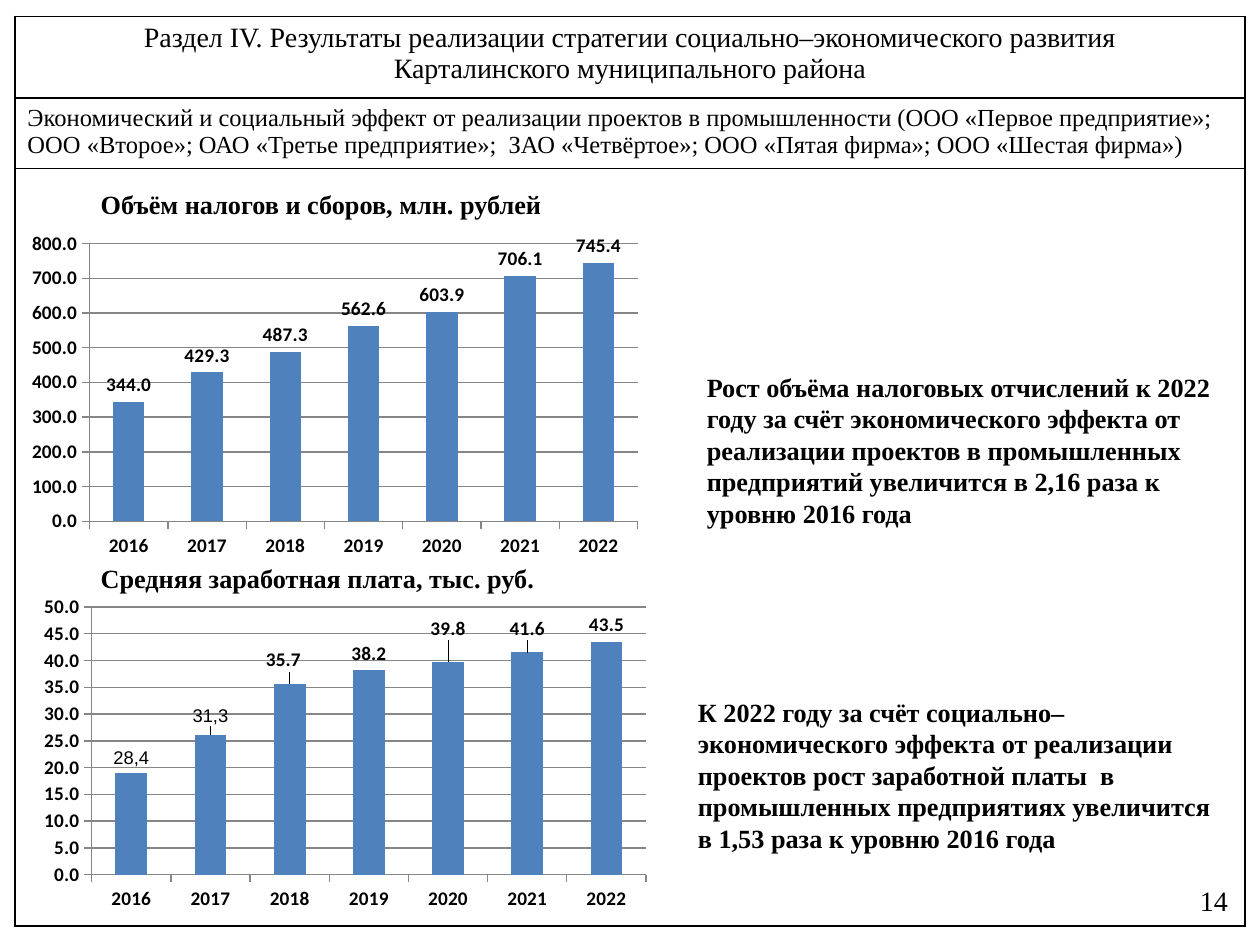
import pptx
import pptx.chart.data
import pptx.dml.color
import pptx.enum.chart
import pptx.enum.text
import pptx.oxml
import pptx.oxml.ns
import pptx.util
from pptx.util import Cm, Pt

COLORS = {"text": "000000", "bar": "4F81BD", "grid": "868686", "border": "000000"}
SERIF = "Times New Roman"
YEARS = [str(year) for year in range(2016, 2023)]
ALIGN = pptx.enum.text.PP_ALIGN
NAMESPACES = pptx.oxml.ns.nsdecls

HEADER_ROWS = [
    (["Раздел IV. Результаты реализации стратегии социально–экономического развития",
      "Карталинского муниципального района"], 16, ALIGN.CENTER),
    (["Экономический и социальный эффект от реализации проектов в промышленности (ООО «Первое предприятие»;",
      "ООО «Второе»; ОАО «Третье предприятие»;  ЗАО «Четвёртое»; ООО «Пятая фирма»; ООО «Шестая фирма»)"],
     14, ALIGN.JUSTIFY),
]
TAX_NOTE = ("Рост объёма налоговых отчислений к 2022 году за счёт экономического эффекта "
            "от реализации проектов в промышленных предприятий увеличится в 2,16 раза "
            "к уровню 2016 года")
WAGE_NOTE = ("К 2022 году за счёт социально–экономического эффекта от реализации проектов "
             "рост заработной платы  в промышленных предприятиях увеличится в 1,53 раза "
             "к уровню 2016 года")


def rgb(name):
    return pptx.dml.color.RGBColor.from_string(COLORS[name])


def style_font(font, size, bold=False, name=SERIF):
    font.size, font.bold, font.name = Pt(size), bold, name
    font.color.rgb = rgb("text")


def border_cell(cell):
    properties = cell._tc.get_or_add_tcPr()
    for position, side in enumerate(("lnL", "lnR", "lnT", "lnB")):
        properties.insert(position, pptx.oxml.parse_xml(
            f'<a:{side} {NAMESPACES("a")} w="12700"><a:solidFill>'
            f'<a:srgbClr val="{COLORS["border"]}"/></a:solidFill></a:{side}>'))


def add_frame_table(slide):
    """Add the one-column table that holds the headings and frames the slide."""
    heights = (1.65, 1.42, 15.27)
    frame = slide.shapes.add_table(len(heights), 1, Cm(0.3), Cm(0.33),
                                   Cm(24.8), Cm(sum(heights)))
    table = frame.table
    table.first_row = table.horz_banding = False
    for row, height in zip(table.rows, heights):
        row.height = Cm(height)
        row.cells[0].fill.background()
        border_cell(row.cells[0])
    for row, (lines, size, alignment) in zip(table.rows, HEADER_ROWS):
        text = row.cells[0].text_frame
        text.text = "\n".join(lines)
        for paragraph in text.paragraphs:
            paragraph.alignment = alignment
            style_font(paragraph.font, size)


def add_text(slide, text, left, top, width, height, size=15, bold=True, alignment=ALIGN.LEFT):
    box = slide.shapes.add_textbox(Cm(left), Cm(top), Cm(width), Cm(height))
    box.text_frame.word_wrap = True
    box.text_frame.vertical_anchor = pptx.enum.text.MSO_ANCHOR.MIDDLE
    paragraph = box.text_frame.paragraphs[0]
    paragraph.text = text
    paragraph.alignment = alignment
    style_font(paragraph.font, size, bold)


def manual_layout(*settings):
    """Return a c:layout element holding the (tag, value) settings."""
    children = "".join(f'<c:{tag} val="{value}"/>' for tag, value in settings)
    return pptx.oxml.parse_xml(
        f'<c:layout {NAMESPACES("c")}><c:manualLayout>{children}</c:manualLayout></c:layout>')


def set_plot_area(chart, x, y, width, height):
    area = chart._chartSpace.chart.plotArea
    for old in area.findall(pptx.oxml.ns.qn("c:layout")):
        area.remove(old)
    area.insert(0, manual_layout(
        ("layoutTarget", "inner"), ("xMode", "edge"), ("yMode", "edge"),
        ("x", x), ("y", y), ("w", width), ("h", height)))


def adjust_label(series, index, x, y, text=None):
    """Shift one data label by chart fractions, optionally replacing its text."""
    label = series.points[index].data_label
    if text:
        paragraph = label.text_frame.paragraphs[0]
        paragraph.text = text
        style_font(paragraph.runs[0].font, 10.5, name="Arial")
    else:
        style_font(label.font, 11, True, "Calibri")
    label.position = pptx.enum.chart.XL_LABEL_POSITION.OUTSIDE_END
    if x or y:
        label._dLbl.insert(1, manual_layout(("x", x), ("y", y)))


def add_column_chart(slide, values, place, plot_area, maximum, step):
    data = pptx.chart.data.CategoryChartData(number_format="0.0")
    data.categories = YEARS
    data.add_series("Series 1", values)
    chart = slide.shapes.add_chart(pptx.enum.chart.XL_CHART_TYPE.COLUMN_CLUSTERED,
                                   *map(Cm, place), data).chart
    chart.has_legend = chart.has_title = False
    style_font(chart.font, 10, name="Calibri")
    set_plot_area(chart, *plot_area)

    for axis in (chart.category_axis, chart.value_axis):
        style_font(axis.tick_labels.font, 11, True, "Calibri")
        axis.major_tick_mark = pptx.enum.chart.XL_TICK_MARK.OUTSIDE
        axis.format.line.color.rgb = rgb("grid")
    axis = chart.value_axis
    axis.minimum_scale, axis.maximum_scale, axis.major_unit = 0, maximum, step
    axis.has_major_gridlines = True
    axis.major_gridlines.format.line.color.rgb = rgb("grid")
    axis.tick_labels.number_format = "0.0"
    axis.tick_labels.number_format_is_linked = False

    plot = chart.plots[0]
    plot.gap_width = 150
    plot.vary_by_categories = False
    series = plot.series[0]
    series.format.fill.solid()
    series.format.fill.fore_color.rgb = rgb("bar")
    labels = series.data_labels
    labels.show_value = True
    labels.number_format = "0.0"
    labels.number_format_is_linked = False
    labels.position = pptx.enum.chart.XL_LABEL_POSITION.OUTSIDE_END
    style_font(labels.font, 11, True, "Calibri")
    return series


def main():
    deck = pptx.Presentation()
    deck.slide_width, deck.slide_height = Cm(25.4), Cm(19.05)
    slide = deck.slides.add_slide(deck.slide_layouts[6])

    add_frame_table(slide)
    add_text(slide, "Объём налогов и сборов, млн. рублей", 1.78, 3.66, 10.8, 0.89)
    add_text(slide, TAX_NOTE, 14, 7.34, 10.8, 3.45)
    add_text(slide, "Средняя заработная плата, тыс. руб.", 1.78, 11.2, 10.8, 0.89)
    add_text(slide, WAGE_NOTE, 13.82, 13.89, 11, 3.45)

    add_column_chart(slide, [344, 429.3, 487.3, 562.6, 603.9, 706.1, 745.4],
                     (0.41, 4.57, 12.7, 6.83), (0.11, 0.05, 0.87, 0.82), 800, 100)
    wages = add_column_chart(slide, [19, 26.1, 35.7, 38.2, 39.8, 41.6, 43.5],
                             (0.58, 11.91, 12.7, 6.58), (0.1, 0.05, 0.88, 0.82), 50, 5)
    adjust_label(wages, 0, 0, 0, "28,4")
    adjust_label(wages, 1, 0, -0.01, "31,3")
    adjust_label(wages, 2, -0.01, -0.02)
    adjust_label(wages, 4, 0, -0.05)
    adjust_label(wages, 5, 0, -0.02)

    add_text(slide, "14", 19.08, 17.63, 5.92, 1.02, 16, False, ALIGN.RIGHT)
    deck.save("out.pptx")


if __name__ == "__main__":
    main()
